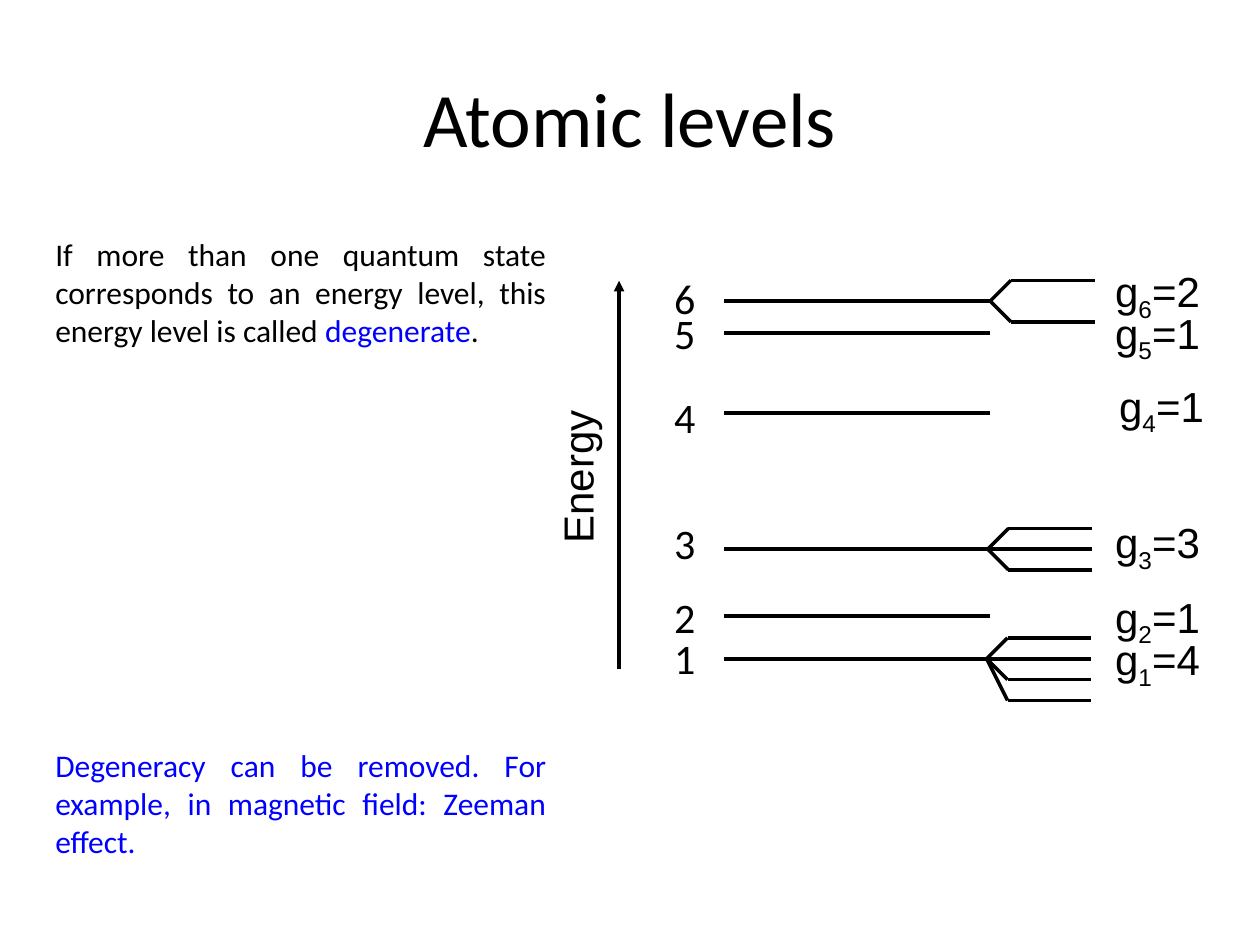
from dataclasses import dataclass

from lxml.etree import SubElement
from pptx import Presentation
from pptx.dml.color import RGBColor
from pptx.enum.shapes import MSO_CONNECTOR
from pptx.enum.text import MSO_ANCHOR, MSO_AUTO_SIZE as AutoSize, PP_ALIGN as Align
from pptx.oxml.ns import qn
from pptx.util import Cm, Pt

BLACK, BLUE = "000000", "0000FF"
LEVEL_LEFT, LEVEL_RIGHT = 14.6, 19.96
NUMBER_LEFT, DEGENERACY_LEFT = 13.34, 22.23
LABEL_HEIGHT = 1.3
FORK_RUN, FORK_LENGTH = 0.42, 2.11


@dataclass
class EnergyLevel:
    """Positions in centimetres; sublevels are offsets from the level line."""
    number: int
    y: float
    number_top: float
    degeneracy_top: float
    fork_x: float = LEVEL_RIGHT
    sublevels: tuple[float, ...] = ()
    align: Align | None = None


LEVELS = [
    EnergyLevel(6, 6.07, 5.36, 5.23, sublevels=(-0.42, 0.42)),
    EnergyLevel(5, 6.71, 6.07, 6.07),
    EnergyLevel(4, 8.33, 7.77, 7.54, align=Align.RIGHT),
    EnergyLevel(3, 11.07, 10.31, 10.29, 19.91, (-0.42, 0, 0.42)),
    EnergyLevel(2, 12.42, 11.79, 11.79),
    EnergyLevel(1, 13.28, 12.62, 12.65, 19.89, (-0.42, 0, 0.42, 0.84)),
]


def color(value: str) -> RGBColor:
    return RGBColor.from_string(value)


def add_run(paragraph, text: str, size: float, font: str, fill: str = BLACK):
    run = paragraph.add_run()
    run.text = text
    run.font.size, run.font.name = Pt(size), font
    run.font.color.rgb = color(fill)
    return run


def place(shape, left: float, top: float, width: float, height: float) -> None:
    shape.left, shape.top = Cm(left), Cm(top)
    shape.width, shape.height = Cm(width), Cm(height)


def add_line(slide, x1: float, y1: float, x2: float, y2: float):
    line = slide.shapes.add_connector(
        MSO_CONNECTOR.STRAIGHT, Cm(x1), Cm(y1), Cm(x2), Cm(y2))
    line.line.color.rgb = color(BLACK)
    line.line.width = Pt(2)
    SubElement(line._element.spPr, qn("a:effectLst"))
    return line


def add_label(slide, left: float, top: float, width: float):
    label = slide.shapes.add_textbox(Cm(left), Cm(top), Cm(width), Cm(LABEL_HEIGHT))
    label.text_frame.word_wrap = False
    label.text_frame.auto_size = AutoSize.SHAPE_TO_FIT_TEXT
    return label


def draw_level(slide, level: EnergyLevel) -> None:
    add_line(slide, LEVEL_LEFT, level.y, LEVEL_RIGHT, level.y)

    number = add_label(slide, NUMBER_LEFT, level.number_top, 1)
    add_run(number.text_frame.paragraphs[0], str(level.number), 24, "Calibri")

    degeneracy = add_label(slide, DEGENERACY_LEFT, level.degeneracy_top, 2.29)
    paragraph = degeneracy.text_frame.paragraphs[0]
    paragraph.alignment = level.align
    add_run(paragraph, "g", 24, "Arial")
    subscript = add_run(paragraph, str(level.number), 24, "Arial")
    subscript.font._element.set("baseline", "-25000")
    add_run(paragraph, f"={len(level.sublevels) or 1}", 24, "Arial")

    bend, end = level.fork_x + FORK_RUN, level.fork_x + FORK_LENGTH
    for offset in level.sublevels:
        y = level.y + offset
        if offset:
            add_line(slide, level.fork_x, level.y, bend, y)
        add_line(slide, bend if offset else level.fork_x, y, end, y)


def fill_note(placeholder, top: float, parts: list[tuple[str, str]]) -> None:
    """Write a justified, unbulleted paragraph of (text, colour) parts."""
    place(placeholder, 0.86, top, 10.41, 2.57)
    placeholder.text_frame.auto_size = AutoSize.NONE
    paragraph = placeholder.text_frame.paragraphs[0]
    paragraph.alignment = Align.JUSTIFY
    paragraph.space_before = Pt(0)
    properties = paragraph._p.get_or_add_pPr()
    properties.set("marL", "0")
    properties.set("indent", "0")
    SubElement(properties, qn("a:buNone"))
    for text, fill in parts:
        add_run(paragraph, text, 18, "Calibri", fill)


def main() -> None:
    presentation = Presentation()
    presentation.slide_width, presentation.slide_height = Cm(25.4), Cm(19.05)
    slide = presentation.slides.add_slide(presentation.slide_layouts[3])
    title, definition, removal = slide.placeholders

    place(title, 1.27, 0.76, 22.86, 3.18)
    title.text_frame.vertical_anchor = MSO_ANCHOR.MIDDLE
    title.text_frame.paragraphs[0].alignment = Align.CENTER
    add_run(title.text_frame.paragraphs[0], "Atomic levels", 44, "Calibri")

    fill_note(definition, 4.62, [
        ("If more than one quantum state corresponds to an energy level, "
         "this energy level is called ", BLACK),
        ("degenerate", BLUE),
        (".", BLACK),
    ])
    fill_note(removal, 14.91, [
        ("Degeneracy can be removed. For example, in magnetic field: "
         "Zeeman effect.", BLUE),
    ])

    for level in LEVELS:
        draw_level(slide, level)

    axis = add_line(slide, 12.48, 13.49, 12.48, 5.66)
    SubElement(axis.line._get_or_add_ln(), qn("a:tailEnd"), type="triangle")
    energy = add_label(slide, 10.03, 8.94, 3.23)
    energy.rotation = 270
    add_run(energy.text_frame.paragraphs[0], "Energy", 24, "Arial")

    presentation.save("out.pptx")


if __name__ == "__main__":
    main()
